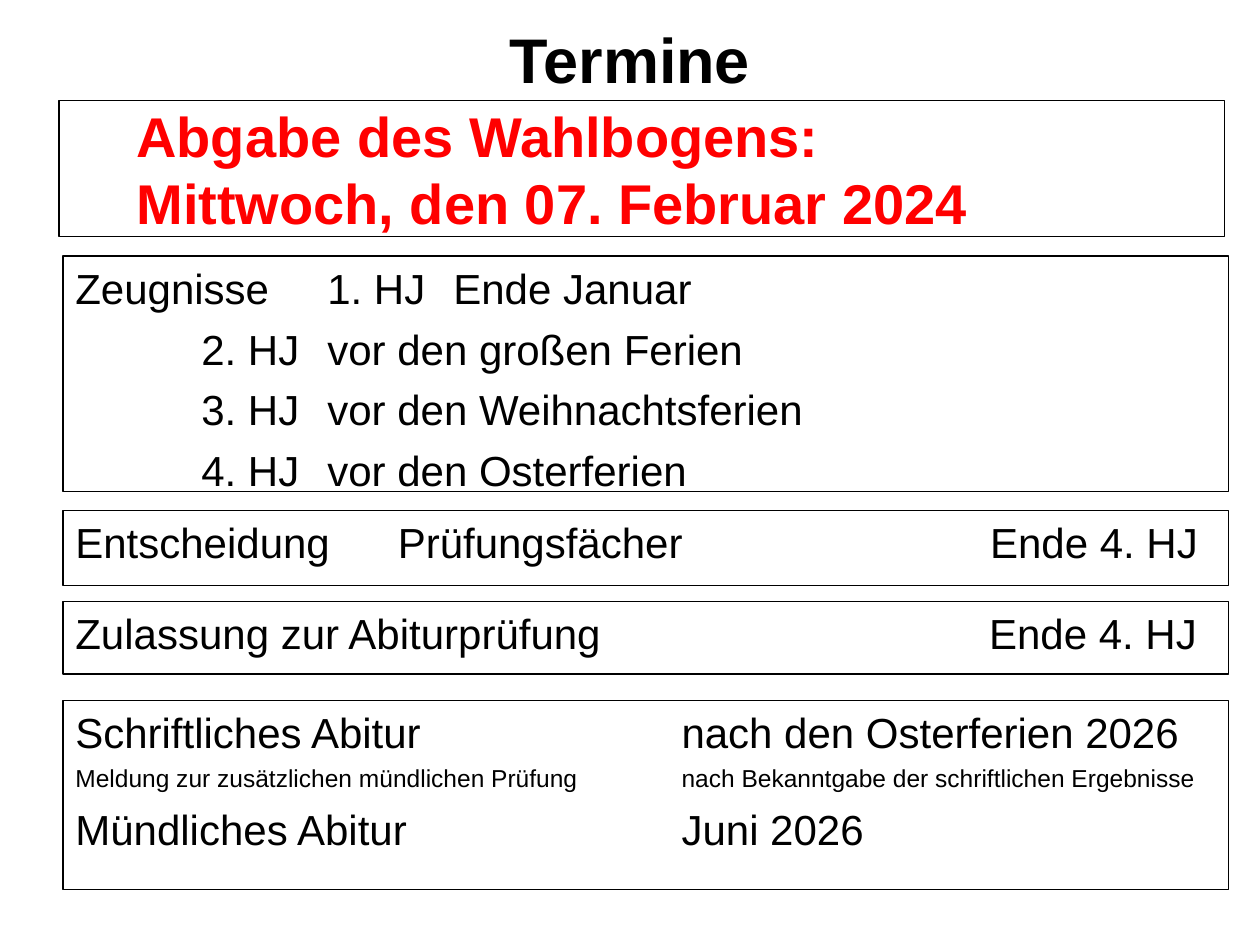
from lxml import etree
from pptx import Presentation
from pptx.dml.color import RGBColor
from pptx.enum.shapes import MSO_SHAPE
from pptx.enum.text import MSO_ANCHOR, PP_ALIGN
from pptx.oxml.ns import qn
from pptx.util import Cm, Pt

RECTANGLE = MSO_SHAPE.RECTANGLE
TOP, MIDDLE = MSO_ANCHOR.TOP, MSO_ANCHOR.MIDDLE
LEFT, CENTER = PP_ALIGN.LEFT, PP_ALIGN.CENTER

COLORS = {"text": "000000", "border": "000000", "deadline": "FF0000"}
FONT = "Arial"
BOX_LEFT, BOX_WIDTH = 1.27, 23.5

# Top, height, tab stops (cm) and lines (text, size) of each box
DATE_BOXES = [
    (5.16, 4.75, [2.54, 5.08, 7.62], [
        ("Zeugnisse\t1. HJ\tEnde Januar", 24),
        ("\t2. HJ\tvor den großen Ferien", 24),
        ("\t3. HJ\tvor den Weihnachtsferien", 24),
        ("\t4. HJ\tvor den Osterferien", 24),
    ]),
    (10.29, 1.52, [6.5, 18.44], [
        ("Entscheidung\tPrüfungsfächer\tEnde 4. HJ", 24),
    ]),
    (12.12, 1.47, [18.42], [
        ("Zulassung zur Abiturprüfung\tEnde 4. HJ", 24),
    ]),
    (14.12, 3.81, [12.22], [
        ("Schriftliches Abitur\tnach den Osterferien 2026", 24),
        ("Meldung zur zusätzlichen mündlichen Prüfung"
         "\tnach Bekanntgabe der schriftlichen Ergebnisse", 14),
        ("Mündliches Abitur\tJuni 2026", 24),
    ]),
]


def rgb(name):
    return RGBColor.from_string(COLORS[name])


def write_line(paragraph, text, size, color="text", bold=False, align=LEFT):
    paragraph.text = text
    paragraph.alignment = align
    for run in paragraph.runs:
        run.font.name = FONT
        run.font.size = Pt(size)
        run.font.bold = bold
        run.font.color.rgb = rgb(color)


def set_tab_stops(paragraph, stops):
    properties = paragraph._p.get_or_add_pPr()
    tab_list = etree.SubElement(properties, qn("a:tabLst"))
    for stop in stops:
        etree.SubElement(tab_list, qn("a:tab"), pos=str(Cm(stop)), algn="l")


def add_box(slide, left, top, height, anchor):
    box = slide.shapes.add_shape(
        RECTANGLE, Cm(left), Cm(top), Cm(BOX_WIDTH), Cm(height))
    box.shadow.inherit = False
    box.fill.background()
    box.line.color.rgb = rgb("border")
    box.line.width = Pt(0.75)
    box.text_frame.word_wrap = True
    box.text_frame.vertical_anchor = anchor
    return box.text_frame


def add_title(slide, text):
    title = slide.shapes.add_textbox(Cm(1.27), Cm(0.53), Cm(22.86), Cm(1.3))
    title.text_frame.word_wrap = True
    title.text_frame.vertical_anchor = MIDDLE
    write_line(title.text_frame.paragraphs[0], text, 36, bold=True, align=CENTER)


def add_deadline(slide, text):
    frame = add_box(slide, 1.19, 2.03, 2.74, MIDDLE)
    frame.margin_left = Cm(1.56)
    write_line(frame.paragraphs[0], text, 32, "deadline", bold=True)


def add_date_box(slide, top, height, stops, lines):
    frame = add_box(slide, BOX_LEFT, top, height, TOP)
    for index, (text, size) in enumerate(lines):
        paragraph = frame.add_paragraph() if index else frame.paragraphs[0]
        write_line(paragraph, text, size)
        paragraph.space_before = Pt(size * 0.25)
        set_tab_stops(paragraph, stops)


def main():
    presentation = Presentation()
    presentation.slide_width, presentation.slide_height = Cm(25.4), Cm(19.05)
    slide = presentation.slides.add_slide(presentation.slide_layouts[6])

    # Heading and deadline
    add_title(slide, "Termine")
    add_deadline(slide, "Abgabe des Wahlbogens:\vMittwoch, den 07. Februar 2024")

    # Dates up to the final exams
    for top, height, stops, lines in DATE_BOXES:
        add_date_box(slide, top, height, stops, lines)

    presentation.save("out.pptx")


if __name__ == "__main__":
    main()
